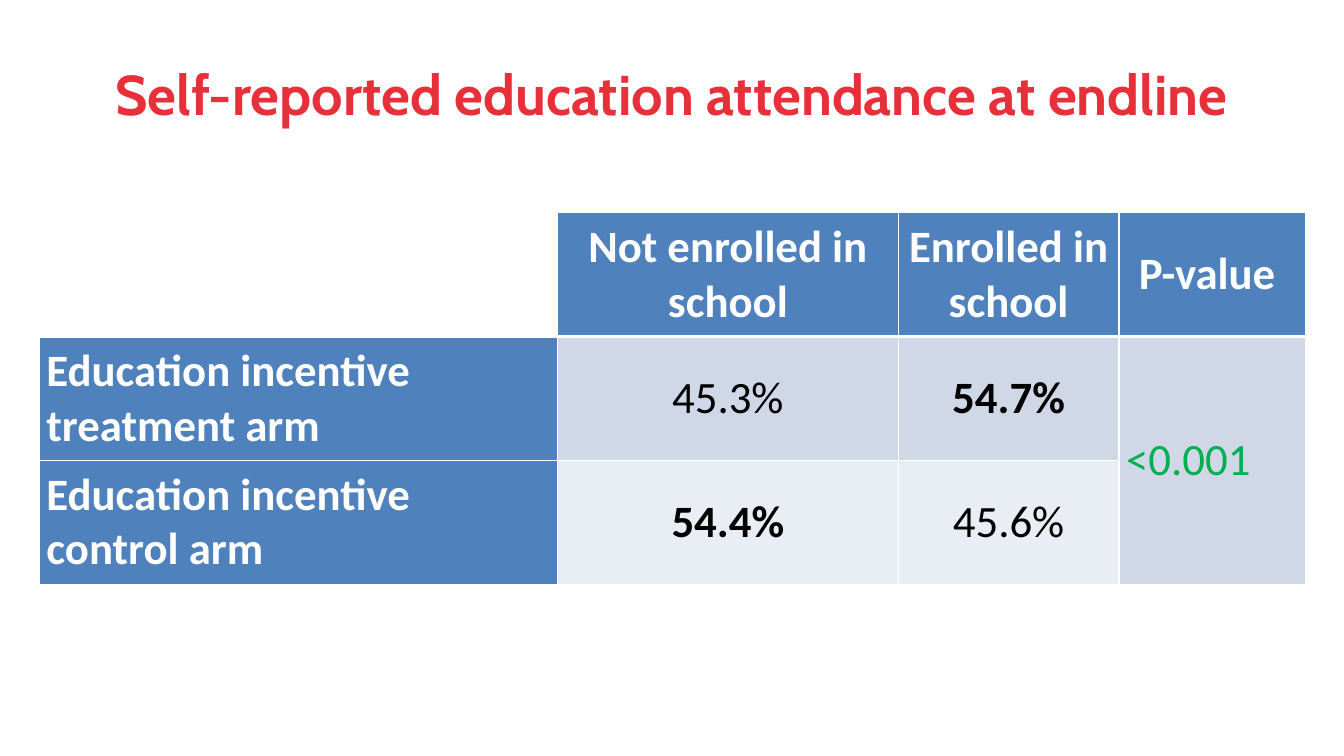
from dataclasses import dataclass

from lxml import etree
from pptx import Presentation
from pptx import util as u
from pptx.dml.color import RGBColor
from pptx.enum import text
from pptx.oxml import ns

# Content
HEADLINE = "Self-reported education attendance at endline"
OUTCOMES = ["Not enrolled in school", "Enrolled in school", "P-value "]
ARMS = [
    ("Education incentive treatment arm", ["45.3%", "54.7%"]),
    ("Education incentive control arm", ["54.4%", "45.6%"]),
]
HIGHLIGHTS = {"54.7%", "54.4%"}
P_VALUE = "<0.001"


@dataclass(frozen=True)
class Theme:
    title: str = "E8303B"
    header: str = "4F81BD"
    bands: tuple = ("D0D8E8", "E9EDF4")
    white: str = "FFFFFF"
    body: str = "000000"
    significant: str = "00B050"
    title_font: str = "Cabin"
    table_font: str = "Calibri"
    title_size: int = 40
    table_size: int = 32


THEME = Theme()
COLUMN_WIDTHS = [13.06, 8.59, 5.56, 4.7]
ROW_HEIGHT = 3.12
LEFT, CENTER = text.PP_ALIGN.LEFT, text.PP_ALIGN.CENTER


def write(paragraph, words, font, size, color, bold, align):
    paragraph.alignment = align
    run = paragraph.add_run()
    run.text = words
    run.font.name = font
    run.font.size = u.Pt(size)
    run.font.bold = bold
    run.font.color.rgb = RGBColor.from_string(color)


def add_border(cell, side, points):
    line = etree.SubElement(cell._tc.get_or_add_tcPr(), ns.qn(f"a:ln{side}"),
                            w=str(u.Pt(points)))
    fill = etree.SubElement(line, ns.qn("a:solidFill"))
    etree.SubElement(fill, ns.qn("a:srgbClr"), val=THEME.white)


def fill_cell(cell, words, fill, color, bold, align=CENTER):
    cell.fill.solid()
    cell.fill.fore_color.rgb = RGBColor.from_string(fill)
    cell.vertical_anchor = text.MSO_ANCHOR.MIDDLE
    cell.margin_left = cell.margin_right = u.Cm(0.18)
    cell.margin_top = cell.margin_bottom = 0
    write(cell.text_frame.paragraphs[0], words, THEME.table_font,
          THEME.table_size, color, bold, align)


def add_headline(slide):
    headline = slide.shapes.title
    headline.left, headline.top = u.Cm(2.08), u.Cm(0.76)
    headline.width, headline.height = u.Cm(29.69), u.Cm(3.18)
    headline.text_frame.vertical_anchor = text.MSO_ANCHOR.MIDDLE
    write(headline.text_frame.paragraphs[0], HEADLINE, THEME.title_font,
          THEME.title_size, THEME.title, True, CENTER)


def add_attendance(slide):
    row_count = len(ARMS) + 1
    attendance = slide.shapes.add_table(
        row_count, len(COLUMN_WIDTHS), u.Cm(0.99), u.Cm(5.36),
        u.Cm(sum(COLUMN_WIDTHS)), u.Cm(row_count * ROW_HEIGHT)).table
    for column, width in zip(attendance.columns, COLUMN_WIDTHS):
        column.width = u.Cm(width)
    for row in attendance.rows:
        row.height = u.Cm(ROW_HEIGHT)

    # White rules, heavier under the header row
    for r in range(row_count):
        for c in range(len(COLUMN_WIDTHS)):
            for side in "LRTB":
                heavy = (r, side) in ((0, "B"), (1, "T"))
                add_border(attendance.cell(r, c), side, 3 if heavy else 1)

    # Header row, with an open corner
    attendance.cell(0, 0).fill.background()
    for c, outcome in enumerate(OUTCOMES, 1):
        fill_cell(attendance.cell(0, c), outcome, THEME.header, THEME.white, True)

    # One row per study arm
    for r, (arm, shares) in enumerate(ARMS, 1):
        fill_cell(attendance.cell(r, 0), arm, THEME.header, THEME.white, True, LEFT)
        for c, share in enumerate(shares, 1):
            fill_cell(attendance.cell(r, c), share, THEME.bands[r - 1],
                      THEME.body, share in HIGHLIGHTS)

    # P-value shared by both arms
    shared = attendance.cell(1, 3)
    shared.merge(attendance.cell(len(ARMS), 3))
    fill_cell(shared, P_VALUE, THEME.bands[0], THEME.significant, False, LEFT)


def main():
    deck = Presentation()
    deck.slide_width, deck.slide_height = u.Cm(33.87), u.Cm(19.05)
    slide = deck.slides.add_slide(deck.slide_layouts[5])
    add_headline(slide)
    add_attendance(slide)
    deck.save("out.pptx")


if __name__ == "__main__":
    main()
